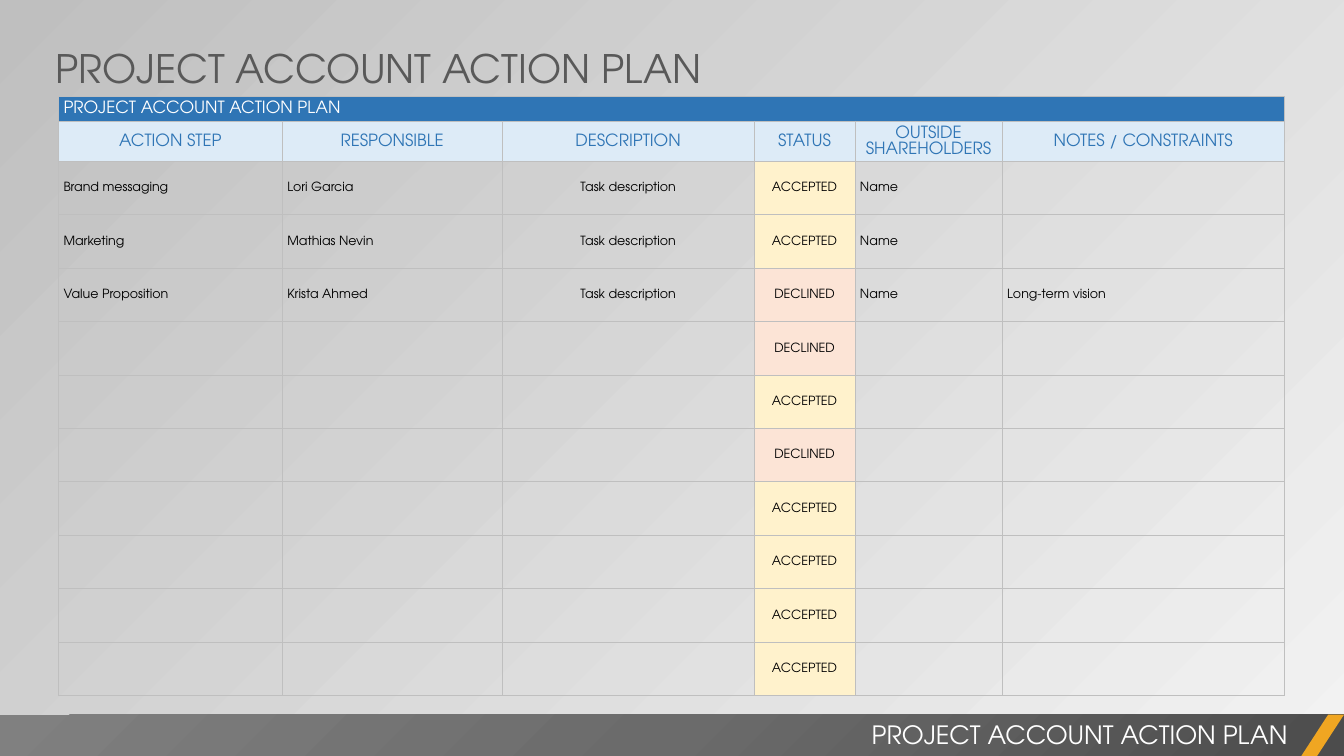
from dataclasses import dataclass

from lxml.etree import SubElement
from pptx import Presentation
from pptx.dml.color import RGBColor
from pptx.enum.shapes import MSO_SHAPE
from pptx.enum.text import MSO_ANCHOR, MSO_AUTO_SIZE, PP_ALIGN
from pptx.oxml.ns import qn
from pptx.util import Inches, Pt


@dataclass(frozen=True)
class Theme:
    font: str = "TeX Gyre Adventor"
    white: str = "FFFFFF"
    black: str = "000000"
    gray: str = "595959"
    grid: str = "BFBFBF"
    blue: str = "2F75B5"
    pale: str = "DDEBF7"
    yes: str = "FFF2CC"
    no: str = "FCE4D6"
    gold: str = "F0A622"
    page: tuple = ((0, "F2F2F2"), (100, "BFBFBF"))
    band: tuple = ((0, "4C4C4C"), (50, "6B6B6B"), (100, "808080"))
    title: int = 28
    foot: int = 18
    head: int = 12
    body: int = 9
    line: float = 0.5


THEME = Theme()
TITLE = "PROJECT ACCOUNT ACTION PLAN"
HEADS = ["ACTION STEP", "RESPONSIBLE", "DESCRIPTION", "STATUS",
         "OUTSIDE SHAREHOLDERS", "NOTES / CONSTRAINTS"]
WIDTHS = [2.22, 2.18, 2.5, 1, 1.46, 2.8]
TASKS = [
    ["Brand messaging", "Lori Garcia", "Task description", "ACCEPTED", "Name", ""],
    ["Marketing", "Mathias Nevin", "Task description", "ACCEPTED", "Name", ""],
    ["Value Proposition", "Krista Ahmed", "Task description", "DECLINED", "Name",
     "Long-term vision"],
]
OPEN = ["DECLINED", "ACCEPTED", "DECLINED"] + ["ACCEPTED"] * 4
MIDDLE = (2, 3)


def paint(fill, color):
    fill.solid()
    fill.fore_color.rgb = RGBColor.from_string(color)


def blend(fill, root, stops):
    fill.gradient()
    grad = next(root.iter(qn("a:gradFill")))
    for child in list(grad):
        grad.remove(child)
    group = SubElement(grad, qn("a:gsLst"))
    for place, color in stops:
        stop = SubElement(group, qn("a:gs"), pos=str(place * 1000))
        SubElement(stop, qn("a:srgbClr"), val=color)
    return grad


def style(frame, text, size, color, align=PP_ALIGN.LEFT):
    frame.text = text
    frame.word_wrap = True
    para = frame.paragraphs[0]
    para.alignment = align
    para.font.name = THEME.font
    para.font.size = Pt(size)
    para.font.color.rgb = RGBColor.from_string(color)


def label(shape, box, text, size, color, align):
    shape.left, shape.top, shape.width, shape.height = map(Inches, box)
    frame = shape.text_frame
    style(frame, text, size, color, align)
    frame.auto_size = MSO_AUTO_SIZE.NONE
    frame.vertical_anchor = MSO_ANCHOR.MIDDLE


def block(slide, kind, box):
    shape = slide.shapes.add_shape(kind, *map(Inches, box))
    shape.shadow.inherit = False
    shape.line.fill.background()
    return shape


def edge(cell):
    props = cell._tc.get_or_add_tcPr()
    for spot, side in enumerate(("lnL", "lnR", "lnT", "lnB")):
        line = props.makeelement(qn(f"a:{side}"), {"w": str(Pt(THEME.line))})
        fill = SubElement(line, qn("a:solidFill"))
        SubElement(fill, qn("a:srgbClr"), val=THEME.grid)
        props.insert(spot, line)


def fill_cell(cell, text, size, color, back=None, center=False):
    cell.vertical_anchor = MSO_ANCHOR.MIDDLE
    cell.margin_left = Inches(0.01 if center else 0.05)
    cell.margin_right = cell.margin_top = Inches(0.01)
    cell.margin_bottom = 0
    if back:
        paint(cell.fill, back)
    else:
        cell.fill.background()
    edge(cell)
    align = PP_ALIGN.CENTER if center else PP_ALIGN.LEFT
    style(cell.text_frame, text, size, color, align)


def add_plan(slide):
    tasks = TASKS + [["", "", "", state, "", ""] for state in OPEN]
    heights = [0.24, 0.4] + [0.53] * len(tasks)
    box = (0.58, 0.96, sum(WIDTHS), sum(heights))
    table = slide.shapes.add_table(len(heights), len(WIDTHS), *map(Inches, box)).table
    table.first_row = table.horz_banding = False
    for col, width in zip(table.columns, WIDTHS):
        col.width = Inches(width)
    for row, height in zip(table.rows, heights):
        row.height = Inches(height)

    table.cell(0, 0).merge(table.cell(0, len(WIDTHS) - 1))
    for col, head in enumerate(HEADS):
        fill_cell(table.cell(0, col), "" if col else TITLE,
                  THEME.head, THEME.white, THEME.blue)
        fill_cell(table.cell(1, col), head, THEME.head,
                  THEME.blue, THEME.pale, True)

    states = {"ACCEPTED": THEME.yes, "DECLINED": THEME.no}
    for row, task in enumerate(tasks, 2):
        for col, text in enumerate(task):
            fill_cell(table.cell(row, col), text, THEME.body, THEME.black,
                      states.get(text), col in MIDDLE)


def add_foot(slide):
    band = block(slide, MSO_SHAPE.RECTANGLE, (0, 7.09, 13.33, 0.42))
    grad = blend(band.fill, band.element, THEME.band)
    shade = SubElement(grad, qn("a:path"), path="circle")
    SubElement(shade, qn("a:fillToRect"), l="100000", t="100000")
    slant = block(slide, MSO_SHAPE.PARALLELOGRAM, (12.9, 7.09, 0.43, 0.42))
    slant.adjustments[0] = 0.65
    paint(slant.fill, THEME.gold)
    box = (5.25, 7.09, 7.62, 0.4)
    text = slide.shapes.add_textbox(*map(Inches, box))
    label(text, box, TITLE, THEME.foot, THEME.white, PP_ALIGN.RIGHT)


def main():
    deck = Presentation()
    deck.slide_width, deck.slide_height = Inches(13.33), Inches(7.5)
    slide = deck.slides.add_slide(deck.slide_layouts[5])
    grad = blend(slide.background.fill, slide.element, THEME.page)
    SubElement(grad, qn("a:lin"), ang=str(225 * 60000), scaled="0")
    add_foot(slide)
    label(slide.shapes.title, (0.45, 0.39, 7.85, 0.57), TITLE,
          THEME.title, THEME.gray, PP_ALIGN.LEFT)
    add_plan(slide)
    deck.save("out.pptx")


if __name__ == "__main__":
    main()
